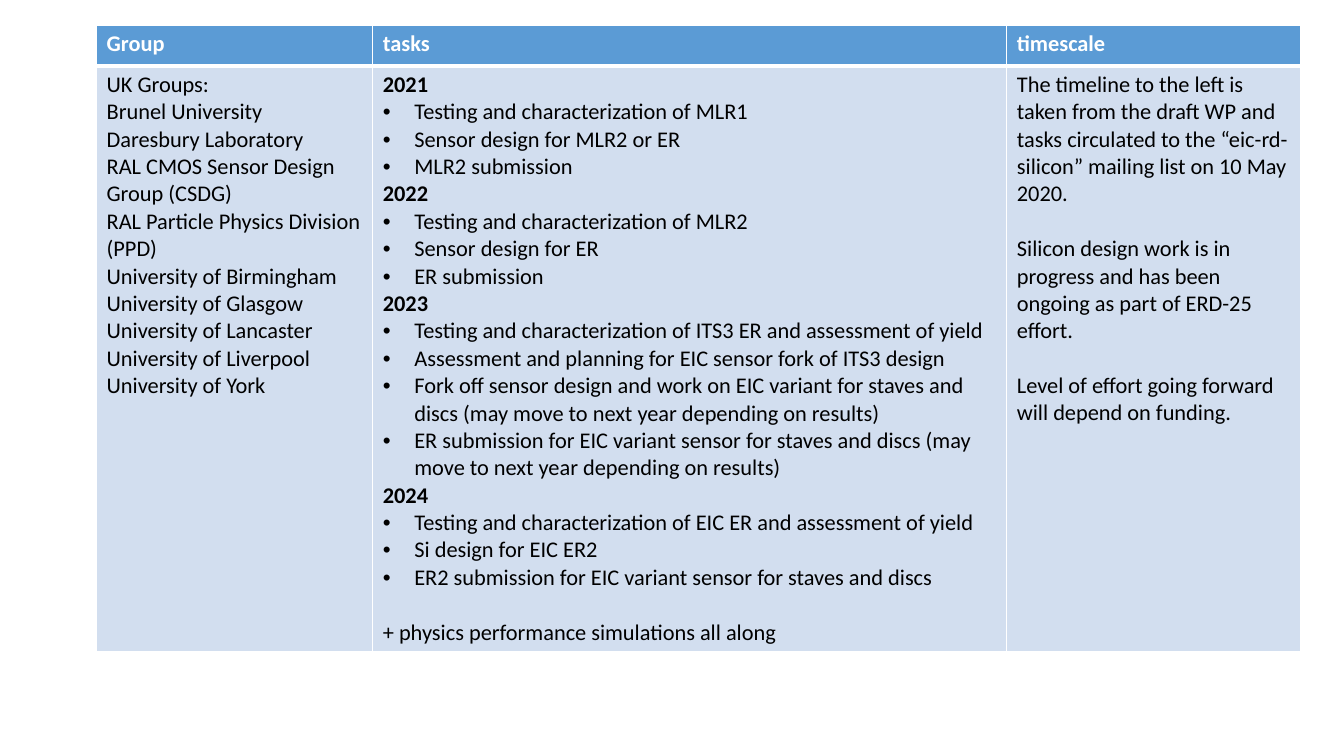
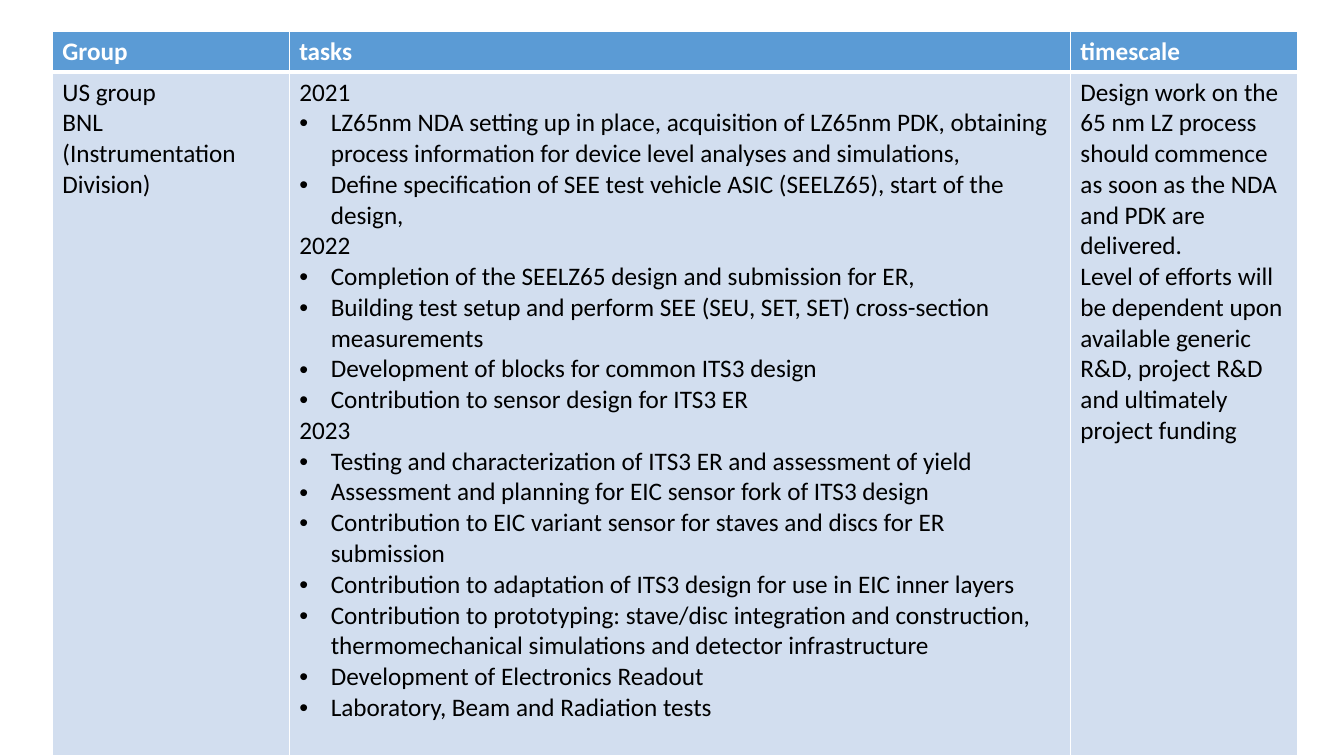
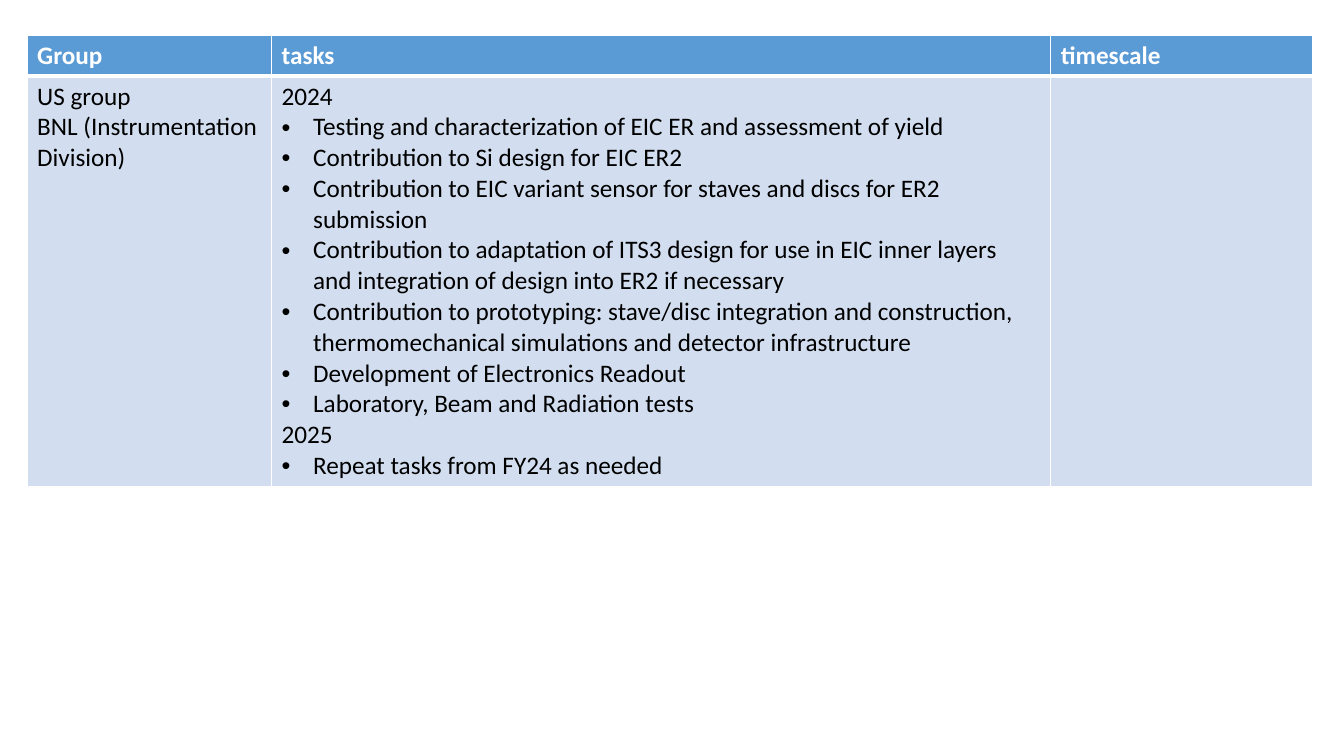
from dataclasses import dataclass
from pptx import Presentation
from pptx.dml.color import RGBColor
from pptx.oxml import parse_xml
from pptx.oxml.ns import nsdecls
from pptx.util import Pt

FONT = "Calibri"
WHITE, BLACK = "FFFFFF", "000000"
HEADER_BLUE, BODY_BLUE = "5B9BD5", "D2DEEF"
HEADINGS = ("Group", "tasks", "timescale")
HEADER_HEIGHT = 29.2
INDENT = Pt(22.5)
GAP = 19.5

ITS3_TEST = "Testing and characterization of ITS3 ER and assessment of yield"
ITS3_FORK = "Assessment and planning for EIC sensor fork of ITS3 design"
EIC_TEST = "Testing and characterization of EIC ER and assessment of yield"
ADAPTATION = "Contribution to adaptation of ITS3 design for use in EIC inner layers"
COMMON_WORK = [
    "Contribution to prototyping: stave/disc integration and construction, "
    "thermomechanical simulations and detector infrastructure",
    "Development of Electronics Readout",
    "Laboratory, Beam and Radiation tests",
]
US_GROUP = ["US group", "BNL (Instrumentation Division)"]


@dataclass
class Line:
    text: str
    bullet: bool = False
    bold: bool = False
    gap: float = 0


@dataclass
class Plan:
    left: float
    top: float
    widths: tuple
    body_height: float
    size: int
    groups: list
    tasks: list
    timescale: list


def plain(texts, gap=0):
    return [Line(text, gap=gap if index else 0) for index, text in enumerate(texts)]


def schedule(years, bold=False):
    lines = []
    for year, tasks in years.items():
        lines.append(Line(year, bold=bold))
        lines += [Line(task, bullet=True) for task in tasks]
    return lines


UK_PLAN = Plan(
    69, 18, (197.3, 452.9, 209.5), 417, 16,
    plain([
        "UK Groups:",
        "Brunel University",
        "Daresbury Laboratory",
        "RAL CMOS Sensor Design Group (CSDG)",
        "RAL Particle Physics Division (PPD)",
        "University of Birmingham",
        "University of Glasgow",
        "University of Lancaster",
        "University of Liverpool",
        "University of York",
    ]),
    schedule({
        "2021": [
            "Testing and characterization of MLR1",
            "Sensor design for MLR2 or ER",
            "MLR2 submission",
        ],
        "2022": [
            "Testing and characterization of MLR2",
            "Sensor design for ER",
            "ER submission",
        ],
        "2023": [
            ITS3_TEST,
            ITS3_FORK,
            "Fork off sensor design and work on EIC variant for staves and discs "
            "(may move to next year depending on results)",
            "ER submission for EIC variant sensor for staves and discs "
            "(may move to next year depending on results)",
        ],
        "2024": [
            EIC_TEST,
            "Si design for EIC ER2",
            "ER2 submission for EIC variant sensor for staves and discs",
        ],
    }, bold=True) + [Line("+ physics performance simulations all along", gap=GAP)],
    plain([
        "The timeline to the left is taken from the draft WP and tasks circulated "
        "to the “eic-rd-silicon” mailing list on 10 May 2020.",
        "Silicon design work is in progress and has been ongoing as part of "
        "ERD-25 effort.",
        "Level of effort going forward will depend on funding.",
    ], GAP),
)

US_PLAN = Plan(
    37.4, 22.3, (169.2, 558, 162), 488.5, 18,
    plain(US_GROUP),
    schedule({
        "2021": [
            "LZ65nm NDA setting up in place, acquisition of LZ65nm PDK, obtaining "
            "process information for device level analyses and simulations,",
            "Define specification of SEE test vehicle ASIC (SEELZ65), start of the "
            "design,",
        ],
        "2022": [
            "Completion of the SEELZ65 design and submission for ER,",
            "Building test setup and perform SEE (SEU, SET, SET) cross-section "
            "measurements",
            "Development of blocks for common ITS3 design",
            "Contribution to sensor design for ITS3 ER",
        ],
        "2023": [
            ITS3_TEST,
            ITS3_FORK,
            "Contribution to EIC variant sensor for staves and discs for ER submission",
            ADAPTATION,
            *COMMON_WORK,
        ],
    }),
    plain([
        "Design work on the 65 nm LZ process should commence as soon as the NDA "
        "and PDK are delivered.",
        "Level of efforts will be dependent upon available generic R&D, project R&D "
        "and ultimately project funding",
    ]),
)

US_LATER_PLAN = Plan(
    19.4, 25.2, (174.6, 556.6, 187.2), 291.5, 18,
    plain(US_GROUP),
    schedule({
        "2024": [
            EIC_TEST,
            "Contribution to Si design for EIC ER2",
            "Contribution to EIC variant sensor for staves and discs for ER2 submission",
            ADAPTATION + " and integration of design into ER2 if necessary",
            *COMMON_WORK,
        ],
        "2025": ["Repeat tasks from FY24 as needed"],
    }),
    [],
)


def color(code):
    return RGBColor.from_string(code)


def add_bullet(para):
    properties = para._p.get_or_add_pPr()
    properties.set("marL", str(INDENT))
    properties.set("indent", str(-INDENT))
    properties.append(parse_xml(f'<a:buFont {nsdecls("a")} typeface="Arial"/>'))
    properties.append(parse_xml(f'<a:buChar {nsdecls("a")} char="•"/>'))


def style_cell(cell, fill, top, bottom):
    properties = cell._tc.get_or_add_tcPr()
    for side, width in (("L", 1), ("R", 1), ("T", top), ("B", bottom)):
        properties.append(parse_xml(
            f'<a:ln{side} {nsdecls("a")} w="{Pt(width)}"><a:solidFill>'
            f'<a:srgbClr val="{WHITE}"/></a:solidFill></a:ln{side}>'))
    cell.fill.solid()
    cell.fill.fore_color.rgb = color(fill)


def write_lines(cell, lines, size, ink):
    frame = cell.text_frame
    for index, line in enumerate(lines):
        para = frame.add_paragraph() if index else frame.paragraphs[0]
        para.text = line.text
        if line.bullet:
            add_bullet(para)
        if line.gap:
            para.space_before = Pt(line.gap)
        for span in para.runs:
            span.font.name = FONT
            span.font.size = Pt(size)
            span.font.bold = line.bold
            span.font.color.rgb = color(ink)


def add_plan_table(page, plan):
    frame = page.shapes.add_table(
        2, len(HEADINGS), Pt(plan.left), Pt(plan.top),
        Pt(sum(plan.widths)), Pt(HEADER_HEIGHT + plan.body_height))
    table = frame.table
    for row, height in zip(table.rows, (HEADER_HEIGHT, plan.body_height)):
        row.height = Pt(height)
    bodies = (plan.groups, plan.tasks, plan.timescale)
    for index, (heading, body, width) in enumerate(zip(HEADINGS, bodies, plan.widths)):
        table.columns[index].width = Pt(width)
        header_cell, body_cell = table.cell(0, index), table.cell(1, index)
        style_cell(header_cell, HEADER_BLUE, 1, 3)
        style_cell(body_cell, BODY_BLUE, 3, 1)
        write_lines(header_cell, [Line(heading, bold=True)], plan.size, WHITE)
        write_lines(body_cell, body, plan.size, BLACK)


def main():
    deck = Presentation()
    deck.slide_width, deck.slide_height = Pt(960), Pt(540)
    for plan in (UK_PLAN, US_PLAN, US_LATER_PLAN):
        page = deck.slides.add_slide(deck.slide_layouts[6])
        add_plan_table(page, plan)
    deck.save("out.pptx")


if __name__ == "__main__":
    main()
